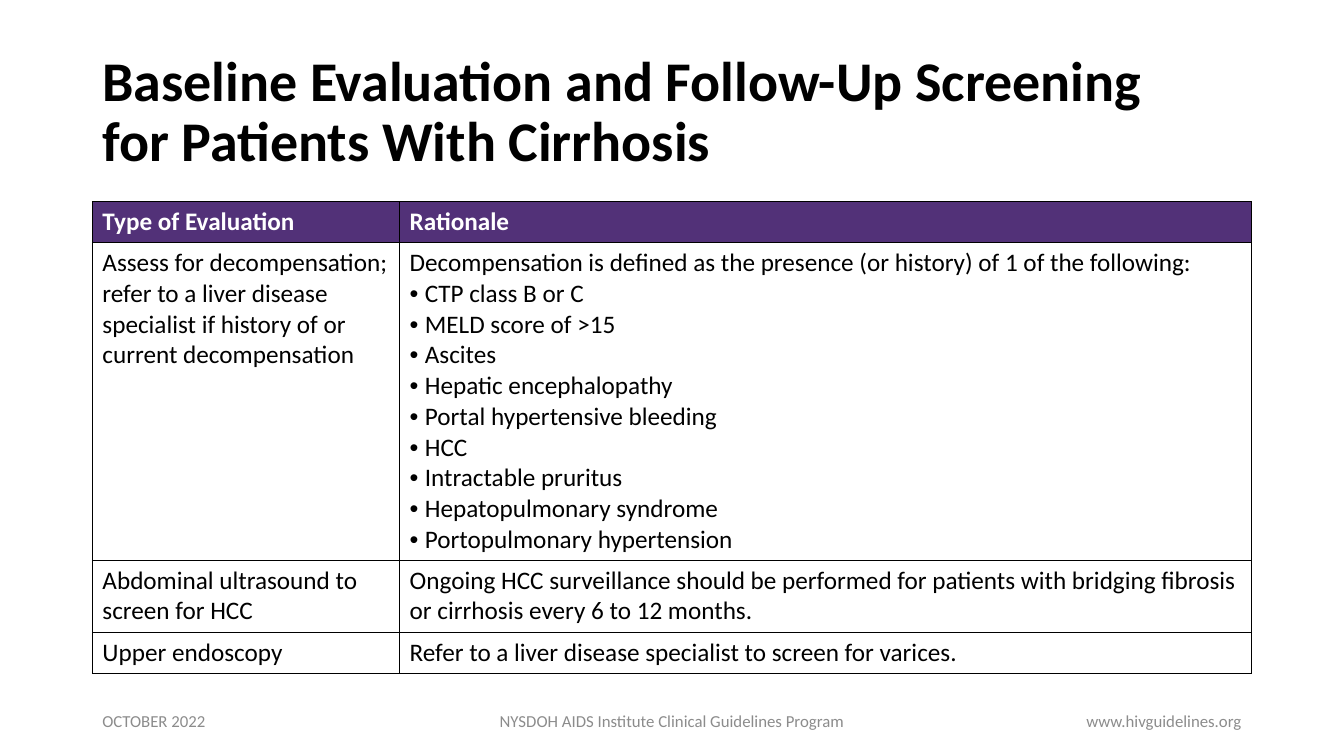
from dataclasses import dataclass

from lxml.etree import SubElement
from pptx import Presentation
from pptx.dml.color import RGBColor
from pptx.enum.text import MSO_ANCHOR, MSO_AUTO_SIZE, PP_ALIGN
from pptx.oxml import parse_xml
from pptx.oxml.ns import nsdecls, qn
from pptx.util import Pt


@dataclass(frozen=True)
class Theme:
    font: str = "Calibri"
    title_size: int = 40
    table_size: int = 18
    footer_size: int = 12
    ink: str = "000000"
    header_fill: str = "523178"
    header_text: str = "FFFFFF"
    footer_text: str = "8C8C8C"


THEME = Theme()
SLIDE_WIDTH, SLIDE_HEIGHT = 960, 540
MARGIN = 66
CONTENT_WIDTH = SLIDE_WIDTH - 2 * MARGIN
FIRST_COLUMN = 219.5
ROW_HEIGHTS = [29.25, 226.5, 51.5, 29.25]
BULLET_INDENT = 10.8

TITLE = "Baseline Evaluation and Follow-Up Screening \vfor Patients With Cirrhosis"
DECOMPENSATION_SIGNS = [
    "CTP class B or C",
    "MELD score of >15",
    "Ascites",
    "Hepatic encephalopathy",
    "Portal hypertensive bleeding",
    "HCC",
    "Intractable pruritus",
    "Hepatopulmonary syndrome",
    "Portopulmonary hypertension",
]
EVALUATIONS = [
    ("Type of Evaluation", "Rationale", []),
    (
        "Assess for decompensation; refer to a liver disease specialist "
        "if history of or current decompensation",
        "Decompensation is defined as the presence (or history) of 1 of the following:",
        DECOMPENSATION_SIGNS,
    ),
    (
        "Abdominal ultrasound to screen for HCC",
        "Ongoing HCC surveillance should be performed for patients with "
        "bridging fibrosis or cirrhosis every 6 to 12 months.",
        [],
    ),
    ("Upper endoscopy", "Refer to a liver disease specialist to screen for varices.", []),
]


def style(paragraph, size, color, bold=False):
    font = paragraph.font
    font.name = THEME.font
    font.size = Pt(size)
    font.bold = bold
    font.color.rgb = RGBColor.from_string(color)


def add_bullet(paragraph):
    properties = paragraph._p.get_or_add_pPr()
    properties.set("marL", str(Pt(BULLET_INDENT)))
    properties.set("indent", str(-Pt(BULLET_INDENT)))
    SubElement(properties, qn("a:buFont")).set("typeface", "Arial")
    SubElement(properties, qn("a:buChar")).set("char", "•")


def add_borders(cell):
    properties = cell._tc.get_or_add_tcPr()
    for index, side in enumerate(("lnL", "lnR", "lnT", "lnB")):
        border = parse_xml(
            f'<a:{side} {nsdecls("a")} w="{Pt(1)}"><a:solidFill>'
            f'<a:srgbClr val="{THEME.ink}"/></a:solidFill></a:{side}>'
        )
        properties.insert(index, border)


def fill_cell(cell, text, bullets, is_header):
    frame = cell.text_frame
    frame.text = text
    for bullet in bullets:
        paragraph = frame.add_paragraph()
        paragraph.text = bullet
        add_bullet(paragraph)
    color = THEME.header_text if is_header else THEME.ink
    for paragraph in frame.paragraphs:
        style(paragraph, THEME.table_size, color, is_header)
    if is_header:
        cell.fill.solid()
        cell.fill.fore_color.rgb = RGBColor.from_string(THEME.header_fill)
    else:
        cell.fill.background()
    add_borders(cell)


def place_title(slide, left, top, width, height):
    title = slide.shapes.title
    title.left, title.top, title.width, title.height = map(Pt, (left, top, width, height))
    frame = title.text_frame
    frame.text = TITLE
    frame.word_wrap = True
    frame.auto_size = MSO_AUTO_SIZE.NONE
    frame.vertical_anchor = MSO_ANCHOR.MIDDLE
    paragraph = frame.paragraphs[0]
    paragraph.alignment = PP_ALIGN.LEFT
    paragraph.line_spacing = 0.9
    style(paragraph, THEME.title_size, THEME.ink, True)


def add_evaluation_table(slide, left, top, width):
    table = slide.shapes.add_table(
        len(EVALUATIONS), 2, Pt(left), Pt(top), Pt(width), Pt(sum(ROW_HEIGHTS))
    ).table
    table.horz_banding = False
    table.columns[0].width = Pt(FIRST_COLUMN)
    table.columns[1].width = Pt(width - FIRST_COLUMN)
    for index, (evaluation, rationale, bullets) in enumerate(EVALUATIONS):
        table.rows[index].height = Pt(ROW_HEIGHTS[index])
        fill_cell(table.cell(index, 0), evaluation, [], index == 0)
        fill_cell(table.cell(index, 1), rationale, bullets, index == 0)


def add_footer(slide, left, top, width, height):
    side_width, center_width = 216, 324
    parts = [
        ("OCTOBER 2022", left, side_width, PP_ALIGN.LEFT),
        (
            "NYSDOH AIDS Institute Clinical Guidelines Program",
            left + (width - center_width) / 2,
            center_width,
            PP_ALIGN.CENTER,
        ),
        ("www.hivguidelines.org", left + width - side_width, side_width, PP_ALIGN.RIGHT),
    ]
    for text, part_left, part_width, alignment in parts:
        box = slide.shapes.add_textbox(Pt(part_left), Pt(top), Pt(part_width), Pt(height))
        frame = box.text_frame
        frame.text = text
        frame.word_wrap = True
        frame.vertical_anchor = MSO_ANCHOR.MIDDLE
        paragraph = frame.paragraphs[0]
        paragraph.alignment = alignment
        style(paragraph, THEME.footer_size, THEME.footer_text)


def main():
    presentation = Presentation()
    presentation.slide_width = Pt(SLIDE_WIDTH)
    presentation.slide_height = Pt(SLIDE_HEIGHT)
    slide = presentation.slides.add_slide(presentation.slide_layouts.get_by_name("Title Only"))
    place_title(slide, MARGIN, 28.75, CONTENT_WIDTH, 104.4)
    add_evaluation_table(slide, MARGIN, 144, CONTENT_WIDTH)
    add_footer(slide, MARGIN, 500.5, CONTENT_WIDTH, 28.75)
    presentation.save("out.pptx")


if __name__ == "__main__":
    main()
